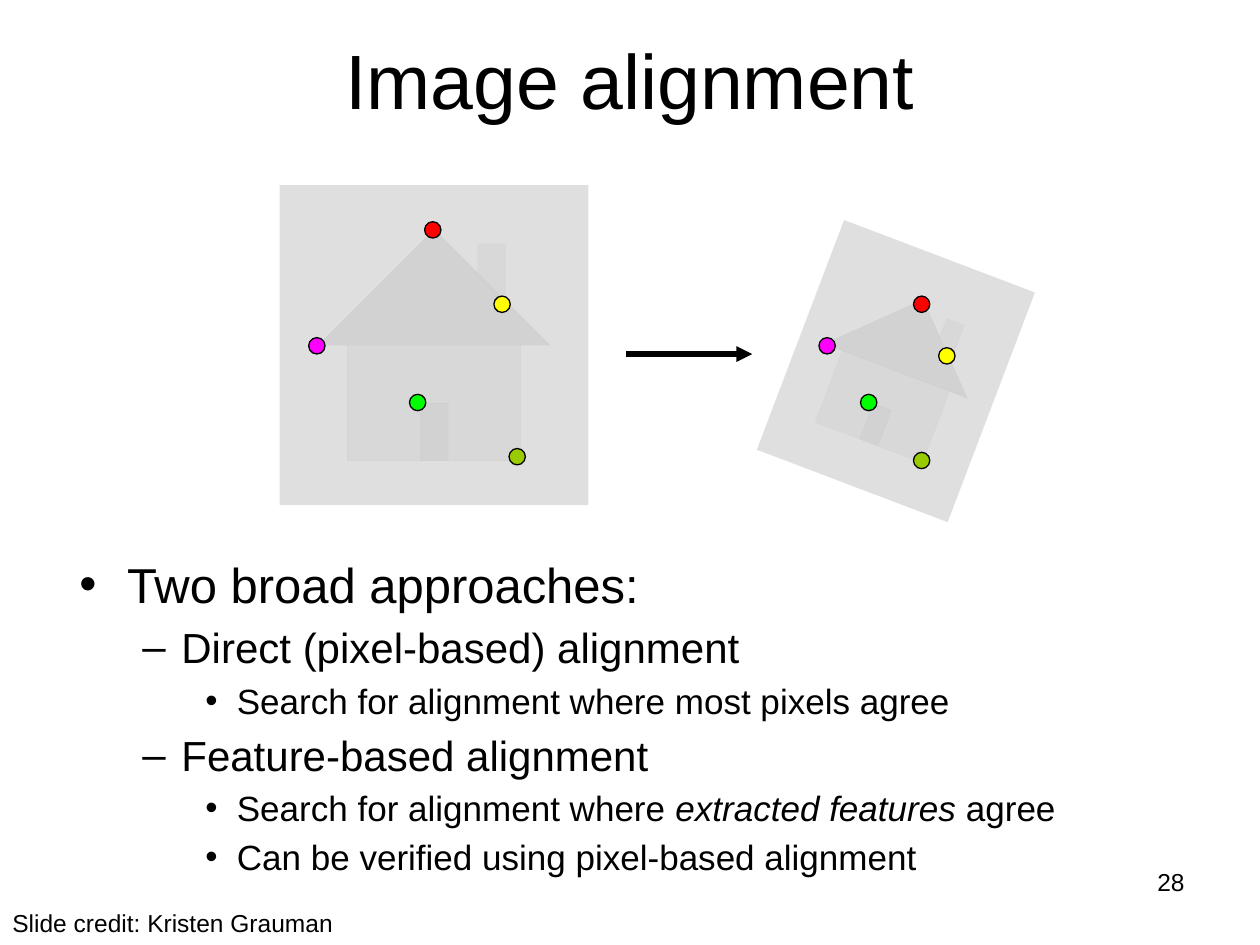
import dataclasses
import typing

import lxml.etree
import pptx
import pptx.dml.color
import pptx.enum.shapes
import pptx.enum.text
import pptx.oxml.ns
import pptx.util

Inches = pptx.util.Inches
Pt = pptx.util.Pt
RGBColor = pptx.dml.color.RGBColor
Shape = pptx.enum.shapes.MSO_SHAPE
Align = pptx.enum.text.PP_ALIGN
Anchor = pptx.enum.text.MSO_ANCHOR
Fit = pptx.enum.text.MSO_AUTO_SIZE
qn = pptx.oxml.ns.qn

BLACK = RGBColor(0, 0, 0)
GRAY = RGBColor(0x80, 0x80, 0x80)
RED = RGBColor(0xFF, 0, 0)
OLIVE = RGBColor(0x99, 0xCC, 0)
GREEN = RGBColor(0, 0xFF, 0)
PINK = RGBColor(0xFF, 0, 0xFF)
YELLOW = RGBColor(0xFF, 0xFF, 0)
DOT_FILLS = [RED, OLIVE, GREEN, PINK, YELLOW]
DOT_SIZE = 0.13


class Box(typing.NamedTuple):
    left: float
    top: float
    width: float
    height: float

    def lengths(self) -> list:
        return [Inches(side) for side in self]


@dataclasses.dataclass
class House:
    box: Box
    turn: float
    dots: list


@dataclasses.dataclass
class Level:
    size: int
    margin: float
    indent: float
    bullet: str


@dataclasses.dataclass
class Item:
    level: int
    texts: list
    slant: int = -1


HOUSES = [
    House(Box(2.22, 1.47, 2.45, 2.54), 0,
          [(3.37, 1.76), (4.04, 3.56), (3.25, 3.13), (2.45, 2.68), (3.92, 2.35)]),
    House(Box(6.3, 1.97, 1.62, 1.95), 20.8,
          [(7.25, 2.35), (7.25, 3.59), (6.83, 3.13), (6.5, 2.68), (7.45, 2.76)]),
]
LEVELS = [
    Level(28, 0.38, -0.38, "•"),
    Level(24, 0.81, -0.31, "–"),
    Level(20, 1.25, -0.25, "•"),
]
ITEMS = [
    Item(0, ["Two broad approaches:"]),
    Item(1, ["Direct (pixel-based) alignment"]),
    Item(2, ["Search for alignment where most pixels agree"]),
    Item(1, ["Feature-based alignment"]),
    Item(2, ["Search for alignment where ", "extracted features", " agree"], 1),
    Item(2, ["Can be verified using pixel-based alignment"]),
]


def place(shape, box: Box) -> None:
    shape.left, shape.top, shape.width, shape.height = box.lengths()


def add_run(para, text: str, size: int, slant: bool = False) -> None:
    run = para.add_run()
    run.text = text
    run.font.name = "Arial"
    run.font.size = Pt(size)
    run.font.italic = slant
    run.font.color.rgb = BLACK


def add_title(slide) -> None:
    title = slide.shapes.title
    place(title, Box(0.5, 0, 9, 1.25))
    frame = title.text_frame
    frame.auto_size = Fit.NONE
    frame.vertical_anchor = Anchor.MIDDLE
    para = frame.paragraphs[0]
    para.alignment = Align.CENTER
    add_run(para, "Image alignment", 44)


def add_list(slide) -> None:
    body = slide.placeholders[1]
    place(body, Box(0.53, 4.35, 9, 4.95))
    frame = body.text_frame
    frame.auto_size = Fit.NONE
    for row, item in enumerate(ITEMS):
        para = frame.add_paragraph() if row else frame.paragraphs[0]
        level = LEVELS[item.level]
        para.level = item.level
        props = para._p.get_or_add_pPr()
        props.set("marL", str(Inches(level.margin)))
        props.set("indent", str(Inches(level.indent)))
        mark = lxml.etree.SubElement(props, qn("a:buChar"))
        mark.set("char", level.bullet)
        for spot, text in enumerate(item.texts):
            add_run(para, text, level.size, spot == item.slant)


def add_arrow(slide) -> None:
    ends = Box(4.97, 2.81, 5.97, 2.81).lengths()
    kind = pptx.enum.shapes.MSO_CONNECTOR.STRAIGHT
    arrow = slide.shapes.add_connector(kind, *ends)
    arrow.line.color.rgb = BLACK
    arrow.line.width = Pt(3)
    tip = lxml.etree.SubElement(arrow.line._get_or_add_ln(), qn("a:tailEnd"))
    tip.set("type", "triangle")
    lxml.etree.SubElement(arrow._element.spPr, qn("a:effectLst"))


def add_solid(slide, kind, box: Box, color: RGBColor):
    shape = slide.shapes.add_shape(kind, *box.lengths())
    shape.shadow.inherit = False
    shape.fill.solid()
    shape.fill.fore_color.rgb = color
    return shape


def add_house(slide, house: House) -> None:
    shape = add_solid(slide, Shape.ACTION_BUTTON_HOME, house.box, GRAY)
    shape.rotation = house.turn
    shape.line.fill.background()
    tint = shape._element.spPr.find(qn("a:solidFill"))[0]
    lxml.etree.SubElement(tint, qn("a:alpha")).set("val", "25000")
    for (left, top), color in zip(house.dots, DOT_FILLS):
        dot = add_solid(slide, Shape.OVAL, Box(left, top, DOT_SIZE, DOT_SIZE), color)
        dot.line.color.rgb = BLACK
        dot.line.width = Pt(0.75)


def add_note(slide, box: Box, text: str, align) -> None:
    frame = slide.shapes.add_textbox(*box.lengths()).text_frame
    frame.word_wrap = True
    para = frame.paragraphs[0]
    para.alignment = align
    add_run(para, text, 14)


def main() -> None:
    deck = pptx.Presentation()
    deck.slide_width = Inches(10)
    deck.slide_height = Inches(7.5)
    slide = deck.slides.add_slide(deck.slide_layouts[1])
    add_title(slide)
    add_list(slide)
    add_arrow(slide)
    for house in HOUSES:
        add_house(slide, house)
    add_note(slide, Box(7.17, 6.83, 2.33, 0.52), "28", Align.RIGHT)
    add_note(slide, Box(0, 7.16, 3.5, 0.34), "Slide credit: Kristen Grauman", Align.LEFT)
    deck.save("out.pptx")


if __name__ == "__main__":
    main()
